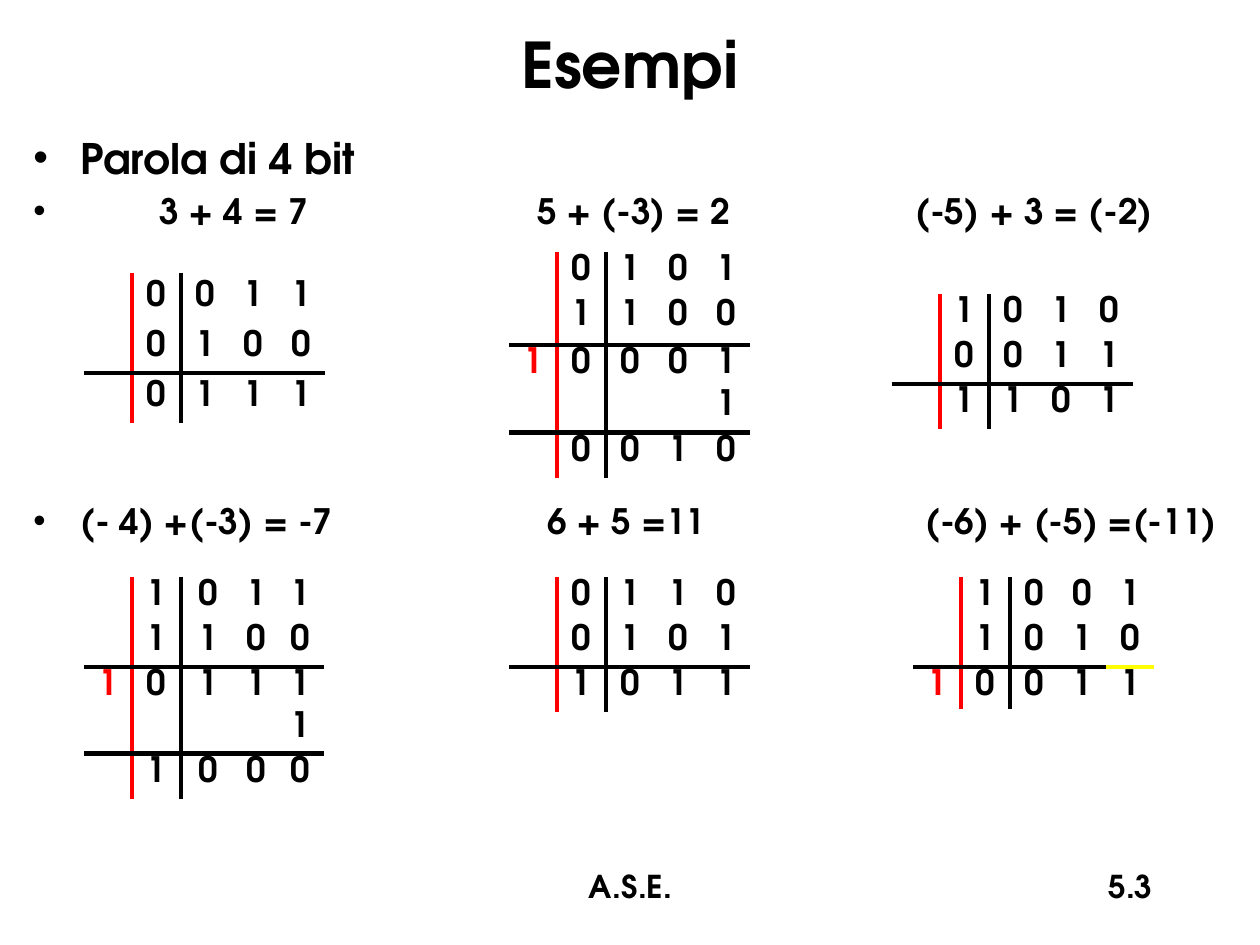
from lxml.etree import SubElement
from pptx import Presentation
from pptx.dml.color import RGBColor
from pptx.enum.text import MSO_ANCHOR, PP_ALIGN
from pptx.oxml.ns import qn
from pptx.util import Pt

PX = 914400 // 126
FONT = "TeX Gyre Adventor"
BLACK = RGBColor(0x00, 0x00, 0x00)
RED = RGBColor(0xFF, 0x00, 0x00)
YELLOW = RGBColor(0xFF, 0xFF, 0x00)
CARRY_LINE = (RED, 2.25)
SIGN_LINE = (BLACK, 3)
SUM_LINE = (BLACK, 3)
ACCENT_LINE = (YELLOW, 2.25)
COLUMNS = (48, 49, 48, 48, 48)
THREE_ROWS = (45, 45, 45)
FIVE_ROWS = (45, 48, 38, 46, 45)


def write_text(paragraph, text, size=20, color=BLACK, align=PP_ALIGN.LEFT,
               line_spacing=None, space_before=None):
    paragraph.alignment = align
    if line_spacing:
        paragraph.line_spacing = line_spacing
    if space_before:
        paragraph.space_before = Pt(space_before)
    if text:
        run = paragraph.add_run()
        run.text = text
        run.font.name = FONT
        run.font.size = Pt(size)
        run.font.bold = True
        run.font.color.rgb = color
    else:
        SubElement(paragraph._p, qn("a:endParaRPr")).set("sz", "1000")


def add_text_frame(slide, left, top, width, height, anchor=MSO_ANCHOR.TOP):
    box = slide.shapes.add_textbox(left * PX, top * PX, width * PX, height * PX)
    frame = box.text_frame
    frame.word_wrap = True
    frame.vertical_anchor = anchor
    return frame


def add_bullet(paragraph, indent=47, tab=126):
    properties = paragraph._p.get_or_add_pPr()
    properties.set("marL", str(indent * PX))
    properties.set("indent", str(-indent * PX))
    properties.set("defTabSz", str(tab * PX))
    SubElement(properties, qn("a:buFont")).set("typeface", "Arial")
    SubElement(properties, qn("a:buChar")).set("char", "•")


def add_bullet_list(slide, items):
    frame = add_text_frame(slide, 21, 126, 1218, 714)
    for index, (text, size, space_before) in enumerate(items):
        paragraph = frame.add_paragraph() if index else frame.paragraphs[0]
        write_text(paragraph, text, size=size, space_before=space_before)
        add_bullet(paragraph)


def set_borders(cell, left, right, top, bottom):
    properties = cell._tc.get_or_add_tcPr()
    sides = {"a:lnL": left, "a:lnR": right, "a:lnT": top, "a:lnB": bottom}
    for tag, border in sides.items():
        line = SubElement(properties, qn(tag))
        if border:
            color, width = border
            line.set("w", str(Pt(width)))
            fill = SubElement(line, qn("a:solidFill"))
            SubElement(fill, qn("a:srgbClr")).set("val", str(color))
        else:
            SubElement(line, qn("a:noFill"))


def add_binary_sum(slide, left, top, rows, heights=THREE_ROWS, columns=COLUMNS,
                   line_spacing=0.8, accents=()):
    shape = slide.shapes.add_table(len(rows), len(columns), left * PX, top * PX,
                                   sum(columns) * PX, sum(heights) * PX)
    table = shape.table
    table.first_row = False
    table.horz_banding = False
    for column, width in zip(table.columns, columns):
        column.width = width * PX
    for row, height in zip(table.rows, heights):
        row.height = height * PX

    verticals = {1: CARRY_LINE, 2: SIGN_LINE}

    def horizontal(edge, column):
        if (edge, column) in accents:
            return ACCENT_LINE
        return SUM_LINE if edge in (2, 4) else None

    for r, digits in enumerate(rows):
        for c, digit in enumerate(digits):
            cell = table.cell(r, c)
            cell.margin_left = cell.margin_right = cell.margin_bottom = 0
            cell.margin_top = 8 * PX
            write_text(cell.text_frame.paragraphs[0], digit.strip(),
                       color=BLACK if c else RED, align=PP_ALIGN.CENTER,
                       line_spacing=line_spacing)
            set_borders(cell, verticals.get(c), verticals.get(c + 1),
                        horizontal(r, c), horizontal(r + 1, c))
            cell.fill.background()


def main():
    presentation = Presentation()
    presentation.slide_width = 1260 * PX
    presentation.slide_height = 945 * PX
    slide = presentation.slides.add_slide(presentation.slide_layouts[6])

    footer = add_text_frame(slide, 431, 861, 399, 63)
    write_text(footer.paragraphs[0], "A.S.E.", size=18, align=PP_ALIGN.CENTER)
    number = add_text_frame(slide, 903, 861, 262, 63)
    write_text(number.paragraphs[0], "5.3", size=18, align=PP_ALIGN.RIGHT)
    title = add_text_frame(slide, 21, 21, 1218, 84, anchor=MSO_ANCHOR.MIDDLE)
    write_text(title.paragraphs[0], "Esempi", size=36, align=PP_ALIGN.CENTER)

    add_bullet_list(slide, [
        ("Parola di 4 bit", 24, 2),
        (" \t3 + 4 = 7\t\t5 + (-3) = 2\t\t(-5) + 3 = (-2)", 20, 4),
        ("(- 4) +(-3) = -7\t\t 6 + 5 =11\t\t (-6) + (-5) =(-11)", 20, 153),
    ])

    add_binary_sum(slide, 84, 273, (" 0011", " 0100", " 0111"),
                   heights=(45, 50, 45), line_spacing=1.0)
    add_binary_sum(slide, 509, 252,
                   (" 0101", " 1100", "10001", "    1", " 0010"),
                   heights=FIVE_ROWS)
    add_binary_sum(slide, 892, 294, (" 1010", " 0011", " 1101"))
    add_binary_sum(slide, 84, 577,
                   (" 1011", " 1100", "10111", "    1", " 1000"),
                   heights=(45, 45, 38, 45, 45), columns=(48, 49, 55, 40, 48))
    add_binary_sum(slide, 509, 577, (" 0110", " 0101", " 1011"))
    add_binary_sum(slide, 913, 577, (" 1001", " 1010", "10011"),
                   heights=(45, 45, 39), accents=((2, 4),))

    presentation.save("out.pptx")


if __name__ == "__main__":
    main()
